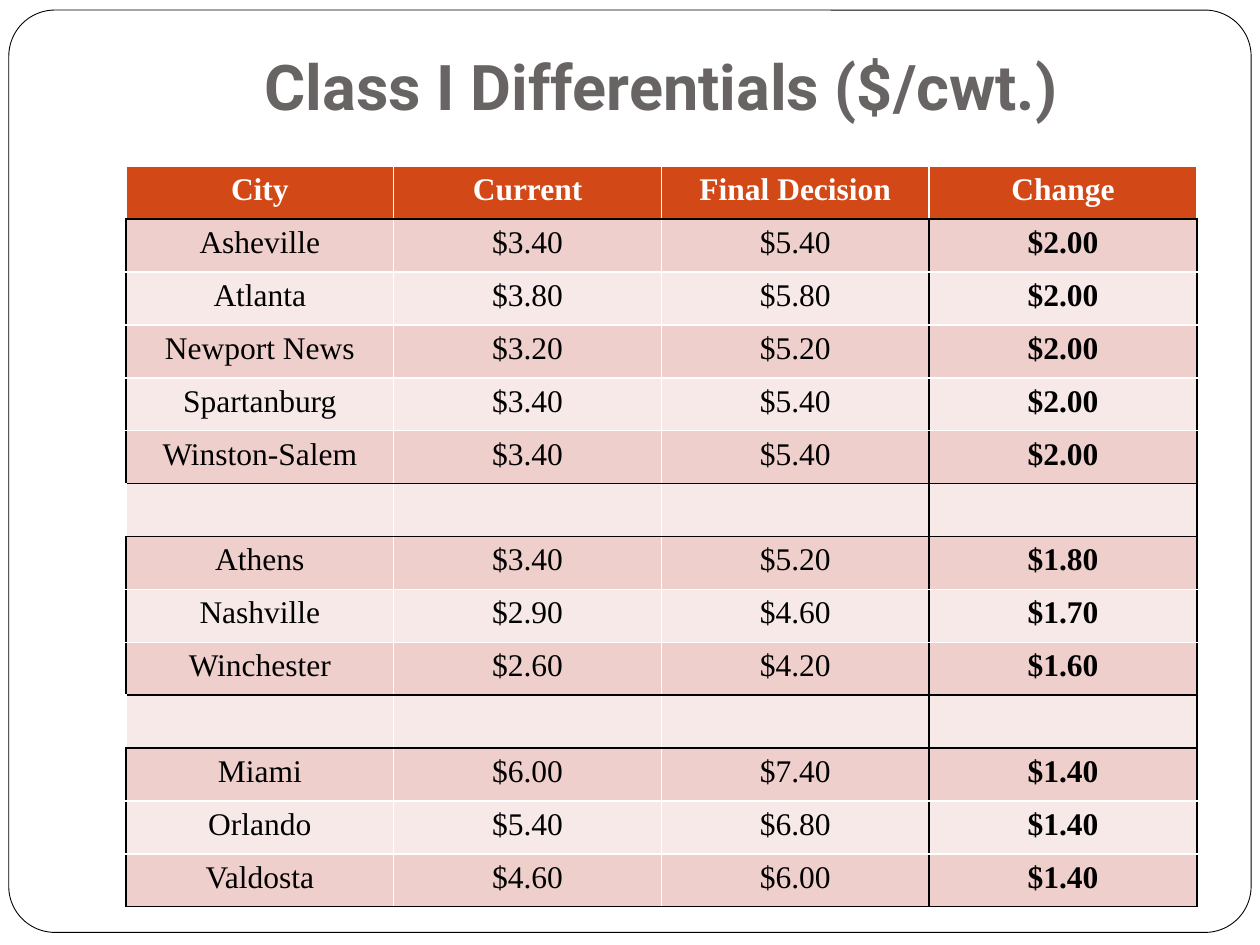
from lxml import etree
from pptx import Presentation
from pptx.dml.color import RGBColor
from pptx.enum import shapes, text
from pptx.oxml import ns
from pptx.util import Inches, Pt

BLACK = RGBColor(0x00, 0x00, 0x00)
WHITE = RGBColor(0xFF, 0xFF, 0xFF)
GREY = RGBColor(0x69, 0x64, 0x64)
ORANGE = RGBColor(0xD3, 0x48, 0x17)
BAND_DARK = RGBColor(0xEF, 0xCF, 0xCC)
BAND_LIGHT = RGBColor(0xF7, 0xE9, 0xE8)

TITLE = "Class I Differentials ($/cwt.)"
HEADER = ("City", "Current", "Final Decision", "Change")
GROUPS = [
    [("Asheville", "$3.40", "$5.40", "$2.00"),
     ("Atlanta", "$3.80", "$5.80", "$2.00"),
     ("Newport News", "$3.20", "$5.20", "$2.00"),
     ("Spartanburg", "$3.40", "$5.40", "$2.00"),
     ("Winston-Salem", "$3.40", "$5.40", "$2.00")],
    [("Athens", "$3.40", "$5.20", "$1.80"),
     ("Nashville", "$2.90", "$4.60", "$1.70"),
     ("Winchester", "$2.60", "$4.20", "$1.60")],
    [("Miami", "$6.00", "$7.40", "$1.40"),
     ("Orlando", "$5.40", "$6.80", "$1.40"),
     ("Valdosta", "$4.60", "$6.00", "$1.40")],
]
SPACER = ("",) * len(HEADER)
LAST = len(HEADER) - 1


def table_rows():
    """Header, then the groups with a spacer row between them."""
    rows = [HEADER]
    for i, group in enumerate(GROUPS):
        rows += ([SPACER] if i else []) + group
    return rows


def format_run(r, font, size, color, bold):
    r.font.name, r.font.size = font, Pt(size)
    r.font.color.rgb, r.font.bold = color, bold


def set_border(cell, side, color):
    ln = etree.SubElement(cell._tc.get_or_add_tcPr(), ns.qn("a:ln" + side), w=str(Pt(1)))
    fill = etree.SubElement(ln, ns.qn("a:solidFill"))
    etree.SubElement(fill, ns.qn("a:srgbClr"), val=str(color))


def black_above(rows, i):
    """True where the line above row i separates header, groups and spacers."""
    if i in (1, len(rows)):
        return True
    return i > 0 and SPACER in (rows[i - 1], rows[i])


def black_left(rows, i, col):
    """True where the line left of a column is black; the table's right edge is col 4."""
    if i == 0:
        return False
    return col >= LAST or (col == 0 and rows[i] != SPACER)


def add_frame(slide):
    sp = slide.shapes.add_shape(shapes.MSO_SHAPE.ROUNDED_RECTANGLE, Inches(0.07),
                                Inches(0.08), Inches(9.86), Inches(7.32))
    sp.adjustments[0] = 0.05
    sp.shadow.inherit = False
    sp.fill.solid()
    sp.fill.fore_color.rgb = WHITE
    sp.line.color.rgb = BLACK
    sp.line.width = Pt(0.5)


def add_title(slide):
    sp = slide.shapes.add_textbox(Inches(1), Inches(0.3), Inches(8.5), Inches(0.78))
    tf = sp.text_frame
    tf.word_wrap = True
    tf.vertical_anchor = text.MSO_ANCHOR.BOTTOM
    tf.margin_bottom = Inches(0.1)
    tf.text = TITLE
    p = tf.paragraphs[0]
    p.alignment = text.PP_ALIGN.CENTER
    format_run(p.runs[0], "Roboto", 36, GREY, True)


def add_differentials(slide):
    rows = table_rows()
    table = slide.shapes.add_table(len(rows), len(HEADER), Inches(1), Inches(1.32),
                                   Inches(8.5), Inches(0.42 * len(rows))).table
    for i, row in enumerate(rows):
        band = ORANGE if i == 0 else BAND_DARK if i % 2 else BAND_LIGHT
        for col, value in enumerate(row):
            cell = table.cell(i, col)
            edges = {"L": black_left(rows, i, col), "R": black_left(rows, i, col + 1),
                     "T": black_above(rows, i), "B": black_above(rows, i + 1)}
            for side, is_black in edges.items():
                set_border(cell, side, BLACK if is_black else WHITE)
            cell.fill.solid()
            cell.fill.fore_color.rgb = band
            cell.text = value
            p = cell.text_frame.paragraphs[0]
            p.alignment = text.PP_ALIGN.CENTER
            for r in p.runs:
                format_run(r, "Times New Roman", 18, BLACK if i else WHITE,
                           i == 0 or col == LAST)


def main():
    prs = Presentation()
    prs.slide_width, prs.slide_height = Inches(10), Inches(7.5)
    slide = prs.slides.add_slide(prs.slide_layouts[6])
    add_frame(slide)
    add_title(slide)
    add_differentials(slide)
    prs.save("out.pptx")


if __name__ == "__main__":
    main()
